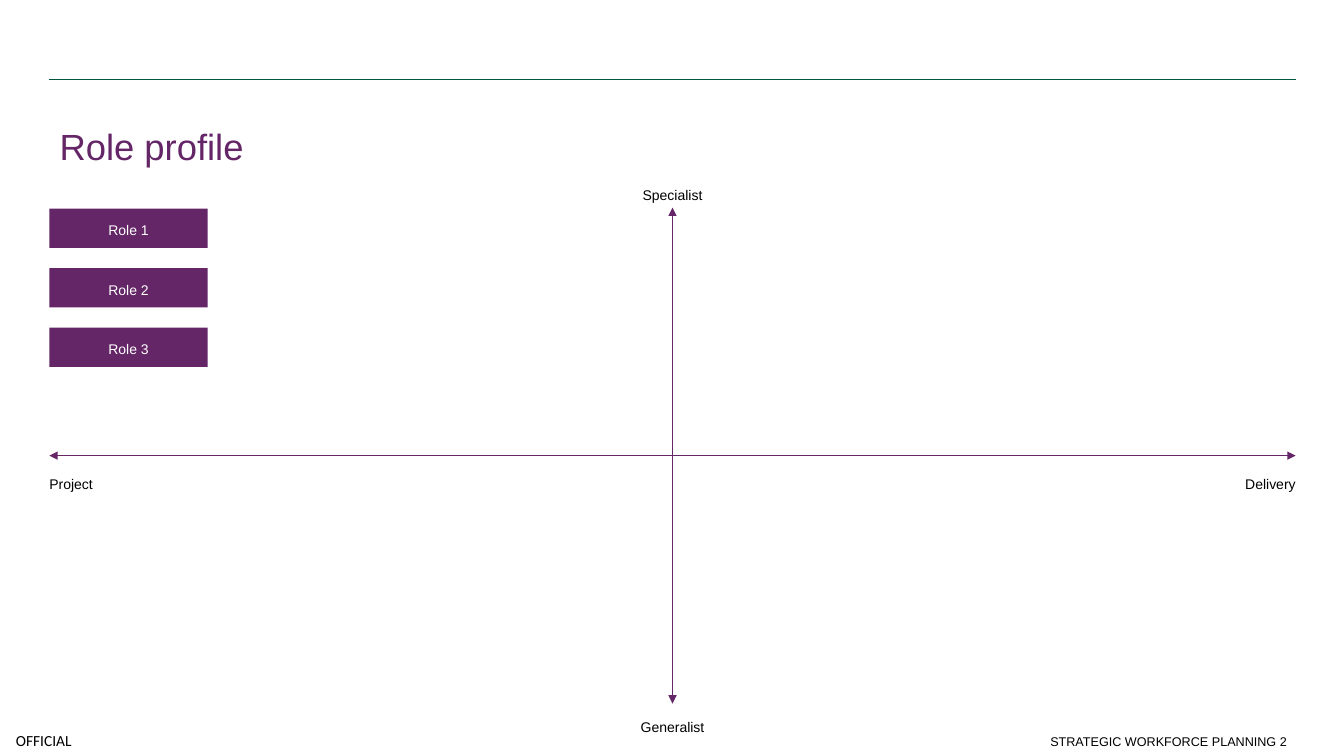
from lxml import etree
from pptx import Presentation
from pptx.dml.color import RGBColor
from pptx.enum.shapes import MSO_CONNECTOR, MSO_SHAPE
from pptx.enum.text import MSO_ANCHOR, MSO_AUTO_SIZE, PP_ALIGN
from pptx.oxml.ns import qn
from pptx.util import Inches, Pt

LEFT, CENTER, RIGHT = PP_ALIGN.LEFT, PP_ALIGN.CENTER, PP_ALIGN.RIGHT
MIDDLE, BOTTOM = MSO_ANCHOR.MIDDLE, MSO_ANCHOR.BOTTOM
NO_AUTOFIT = MSO_AUTO_SIZE.NONE
RECTANGLE = MSO_SHAPE.RECTANGLE
STRAIGHT = MSO_CONNECTOR.STRAIGHT

COLORS = {"purple": "642667", "green": "00573F", "black": "000000", "white": "FFFFFF"}
MARGIN_LEFT, MARGIN_RIGHT = 0.49, 12.85
LABEL_WIDTH, LABEL_HEIGHT = 1.18, 0.39
AXIS_X, AXIS_Y = 6.67, 4.52


class RoleProfileSlide:
    def __init__(self, presentation):
        self.slide = presentation.slides.add_slide(presentation.slide_layouts[5])
        self.font = "Arial"

    def color(self, name):
        return RGBColor.from_string(COLORS[name])

    def fill_text(self, shape, text, size, color, align=LEFT, anchor=MIDDLE,
                  spacing=1.2, after=0, inset=(0, 0), font=None):
        frame = shape.text_frame
        frame.word_wrap = True
        frame.auto_size = NO_AUTOFIT
        frame.vertical_anchor = anchor
        frame.margin_left = frame.margin_right = Inches(inset[0])
        frame.margin_top = frame.margin_bottom = Inches(inset[1])
        paragraph = frame.paragraphs[0]
        paragraph.alignment = align
        paragraph.line_spacing = spacing
        paragraph.space_after = Pt(after)
        run = paragraph.add_run()
        run.text = text
        run.font.name = font or self.font
        run.font.size = Pt(size)
        run.font.color.rgb = self.color(color)

    def title(self, text, left, top, width, height):
        heading = self.slide.shapes.title
        heading.left, heading.top = Inches(left), Inches(top)
        heading.width, heading.height = Inches(width), Inches(height)
        self.fill_text(heading, text, 26, "purple", inset=(0.1, 0.05))

    def label(self, text, left, top, width=LABEL_WIDTH, height=LABEL_HEIGHT,
              size=10, **style):
        box = self.slide.shapes.add_textbox(
            Inches(left), Inches(top), Inches(width), Inches(height))
        self.fill_text(box, text, size, "black", **style)

    def role(self, text, left, top, width, height):
        card = self.slide.shapes.add_shape(
            RECTANGLE, Inches(left), Inches(top), Inches(width), Inches(height))
        card.shadow.inherit = False
        card.fill.solid()
        card.fill.fore_color.rgb = self.color("purple")
        card.line.fill.background()
        self.fill_text(card, text, 10, "white", align=CENTER, after=9)

    def line(self, start, end, color, arrows=False):
        rule = self.slide.shapes.add_connector(
            STRAIGHT, *(Inches(value) for value in (*start, *end)))
        rule.line.color.rgb = self.color(color)
        rule.line.width = Pt(1)
        properties = rule._element.spPr
        if arrows:
            outline = properties.find(qn("a:ln"))
            for tag in ("a:headEnd", "a:tailEnd"):
                etree.SubElement(outline, qn(tag), type="triangle")
        etree.SubElement(properties, qn("a:effectLst"))


def main():
    presentation = Presentation()
    presentation.slide_width = Inches(13.33)
    presentation.slide_height = Inches(7.5)
    profile = RoleProfileSlide(presentation)

    profile.line((MARGIN_LEFT, 0.79), (MARGIN_RIGHT, 0.79), "green")
    profile.label("OFFICIAL", 0, 7.19, 0.87, 0.31, size=11, align=CENTER,
                  spacing=1.0, font="Calibri")
    profile.title("Role profile", MARGIN_LEFT, 0.89, MARGIN_RIGHT - MARGIN_LEFT, 1.02)

    for index in range(3):
        profile.role(f"Role {index + 1}", MARGIN_LEFT, 2.07 + index * 0.59, 1.57, 0.39)

    profile.line((MARGIN_LEFT, AXIS_Y), (MARGIN_RIGHT, AXIS_Y), "purple", arrows=True)
    profile.line((AXIS_X, 6.98), (AXIS_X, 2.06), "purple", arrows=True)
    for text, left, top, align in (
        ("Project", MARGIN_LEFT, 4.59, LEFT),
        ("Delivery", MARGIN_RIGHT - LABEL_WIDTH, 4.59, RIGHT),
        ("Specialist", AXIS_X - LABEL_WIDTH / 2, 1.72, CENTER),
        ("Generalist", AXIS_X - LABEL_WIDTH / 2, 7.0, CENTER),
    ):
        profile.label(text, left, top, align=align)

    profile.label("STRATEGIC WORKFORCE PLANNING 2", 6.84, 7.09, 6.02, size=9,
                  align=RIGHT, anchor=BOTTOM, spacing=1.0, inset=(0.1, 0.05))
    presentation.save("out.pptx")


if __name__ == "__main__":
    main()
